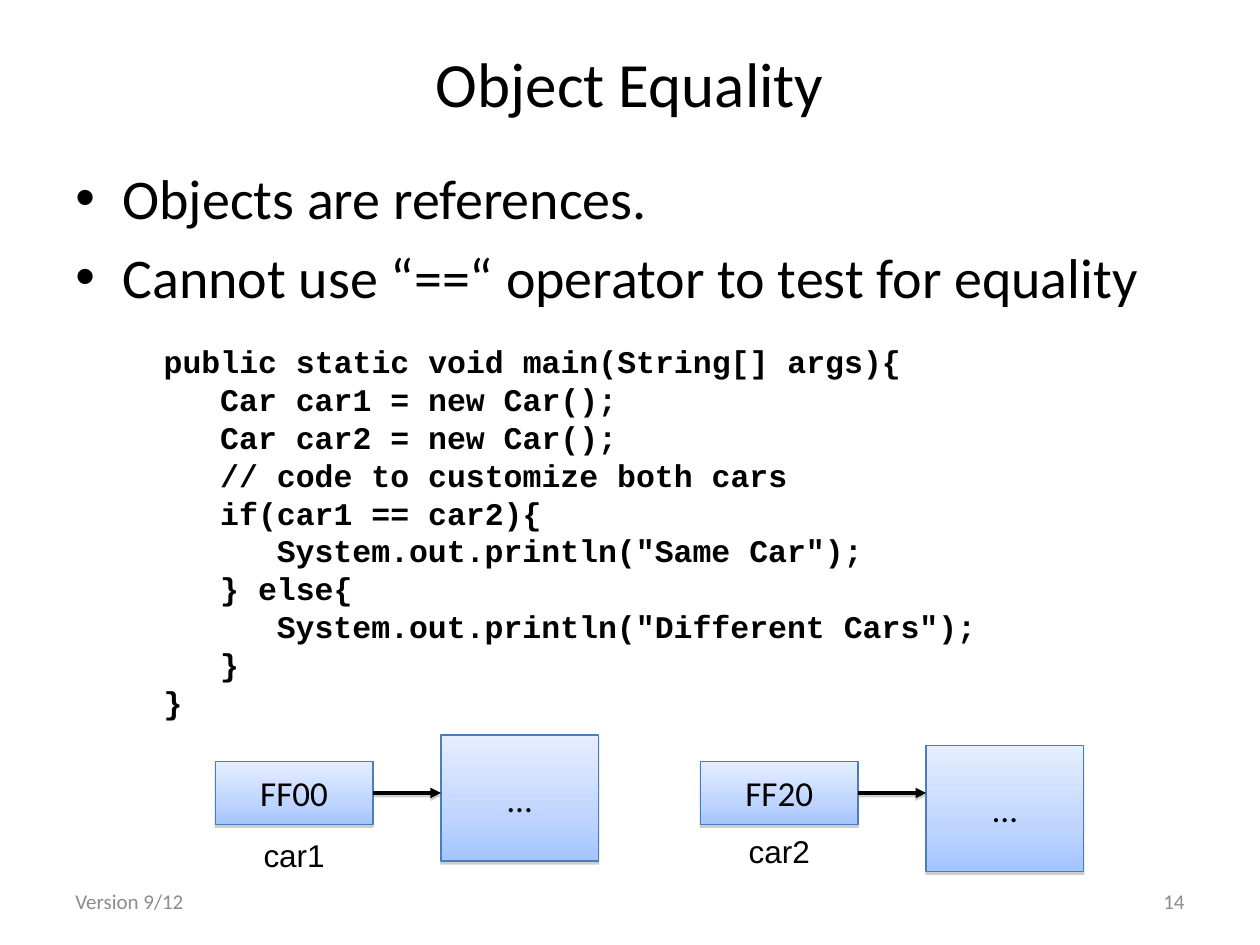
from dataclasses import dataclass

from lxml import etree
from pptx import Presentation
from pptx.dml.color import RGBColor
from pptx.enum.shapes import MSO_CONNECTOR, MSO_SHAPE
from pptx.enum.text import MSO_ANCHOR, PP_ALIGN
from pptx.oxml.ns import qn
from pptx.util import Cm, Pt

LEFT, CENTER, RIGHT = PP_ALIGN.LEFT, PP_ALIGN.CENTER, PP_ALIGN.RIGHT
TOP, MIDDLE = MSO_ANCHOR.TOP, MSO_ANCHOR.MIDDLE
ROUNDED, STRAIGHT = MSO_SHAPE.ROUNDED_RECTANGLE, MSO_CONNECTOR.STRAIGHT
RIGHT_SIDE = 3


@dataclass(frozen=True)
class Theme:
    text: str = "000000"
    muted: str = "8C8C8C"
    border: str = "4A7EBB"
    shadow: str = "808080"
    gradient: tuple = ((0, "E5EEFF"), (65, "BFD5FF"), (100, "A3C4FF"))
    font: str = "Calibri"
    code_font: str = "Courier New"
    label_font: str = "Arial"
    title_size: float = 36
    body_size: float = 32
    box_size: float = 20
    code_size: float = 18
    footer_size: float = 12


@dataclass(frozen=True)
class Box:
    """A rectangle in centimetres."""
    left: float
    top: float
    width: float
    height: float

    def lengths(self):
        return Cm(self.left), Cm(self.top), Cm(self.width), Cm(self.height)


THEME = Theme()
BULLETS = ("Objects are references.",
           "Cannot use “==“ operator to test for equality")
CODE = (
    (0, "public static void main(String[] args){"),
    (1, "Car car1 = new Car();"),
    (1, "Car car2 = new Car();"),
    (1, "// code to customize both cars"),
    (1, "if(car1 == car2){"),
    (2, 'System.out.println("Same Car");'),
    (1, "} else{"),
    (2, 'System.out.println("Different Cars");'),
    (1, "}"),
    (0, "}"),
)
CODE_INDENT = 1.14


def add_child(parent, tag, **attributes):
    child = etree.SubElement(parent, qn(tag))
    for name, value in attributes.items():
        child.set(name, str(value))
    return child


def write(frame, lines, *, size, font=THEME.font, color=THEME.text, bold=False,
          align=LEFT, anchor=TOP, wrap=True, space_before=0):
    """Fill a text frame with one paragraph per line and return them."""
    frame.word_wrap = wrap
    frame.vertical_anchor = anchor
    for index, line in enumerate(lines):
        para = frame.paragraphs[0] if index == 0 else frame.add_paragraph()
        para.alignment = align
        para.space_before = Pt(space_before)
        span = para.add_run()
        span.text = line
        span.font.name = font
        span.font.size = Pt(size)
        span.font.bold = bold
        span.font.color.rgb = RGBColor.from_string(color)
    return frame.paragraphs


def add_text(page, box, *lines, **style):
    frame = page.shapes.add_textbox(*box.lengths()).text_frame
    return write(frame, lines, **style)


def add_shadow(properties):
    effects = properties.find(qn("a:effectLst"))
    if effects is None:
        effects = add_child(properties, "a:effectLst")
    shadow = add_child(effects, "a:outerShdw", blurRad=0, dist=Pt(1.6),
                       dir=90 * 60000, algn="ctr", rotWithShape=0)
    color = add_child(shadow, "a:srgbClr", val=THEME.shadow)
    add_child(color, "a:alpha", val=38000)


def add_memory_box(page, box, text):
    shape = page.shapes.add_shape(ROUNDED, *box.lengths())
    shape.adjustments[0] = 0
    shape.fill.gradient()
    shape.fill.gradient_angle = 270
    stops = shape._element.spPr.find(qn("a:gradFill")).find(qn("a:gsLst"))
    stops.clear()
    for percent, color in THEME.gradient:
        stop = add_child(stops, "a:gs", pos=percent * 1000)
        add_child(stop, "a:srgbClr", val=color)
    shape.line.color.rgb = RGBColor.from_string(THEME.border)
    shape.line.width = Pt(0.75)
    shape.shadow.inherit = False
    add_shadow(shape._element.spPr)
    write(shape.text_frame, [text], size=THEME.box_size, align=CENTER,
          anchor=MIDDLE, wrap=False)
    return shape


def add_arrow(page, start_shape, end_x, y):
    """Draw an arrow from the right side of a shape to a point."""
    arrow = page.shapes.add_connector(STRAIGHT, 0, 0, Cm(end_x), Cm(y))
    arrow.begin_connect(start_shape, RIGHT_SIDE)
    arrow.line.color.rgb = RGBColor.from_string(THEME.text)
    arrow.line.width = Pt(2)
    add_child(arrow.line._get_or_add_ln(), "a:tailEnd", type="triangle")
    add_shadow(arrow._element.spPr)


def draw_title(page, box):
    add_text(page, box, "Object Equality", size=THEME.title_size,
             align=CENTER, anchor=MIDDLE)


def draw_bullets(page, box):
    for para in add_text(page, box, *BULLETS, size=THEME.body_size,
                         space_before=6.4):
        properties = para._p.get_or_add_pPr()
        properties.set("marL", str(Cm(0.95)))
        properties.set("indent", str(-Cm(0.95)))
        add_child(properties, "a:buFont", typeface=THEME.label_font)
        add_child(properties, "a:buChar", char="•")


def draw_code(page, box):
    paras = add_text(page, box, *(line for _, line in CODE), bold=True,
                     size=THEME.code_size, font=THEME.code_font)
    for para, (level, _) in zip(paras, CODE):
        para._p.get_or_add_pPr().set("marL", str(Cm(level * CODE_INDENT)))


def draw_reference(page, box, name, address, object_rise, label_drop):
    """Draw a named reference in the box and the object it points to."""
    object_left = box.left + box.width + 1.37
    reference = add_memory_box(page, box, address)
    add_memory_box(page, Box(object_left, box.top - object_rise, box.width,
                             box.height * 2), "…")
    add_arrow(page, reference, object_left, box.top + box.height / 2)
    label_box = Box(box.left, box.top + label_drop, box.width, 0.97)
    paras = add_text(page, label_box, name, size=THEME.code_size,
                     font=THEME.label_font, align=CENTER)
    paras[0].space_before = Pt(0)


def draw_footer(page, box):
    part = 5.92
    style = dict(size=THEME.footer_size, color=THEME.muted, anchor=MIDDLE)
    add_text(page, Box(box.left, box.top, part, box.height), "Version 9/12", **style)
    add_text(page, Box(box.left + box.width - part, box.top, part, box.height),
             "14", align=RIGHT, **style)


def main():
    deck = Presentation()
    deck.slide_width, deck.slide_height = Cm(25.4), Cm(19.05)
    page = deck.slides.add_slide(deck.slide_layouts[6])
    draw_title(page, Box(1.27, 0.76, 22.86, 1.78))
    draw_bullets(page, Box(1.27, 3.18, 22.86, 13.84))
    draw_footer(page, Box(1.27, 17.65, 22.86, 1.02))
    draw_code(page, Box(3.05, 6.78, 17.07, 7.95))
    draw_reference(page, Box(4.34, 15.35, 3.18, 1.27), "car1", "FF00", 0.53, 1.38)
    draw_reference(page, Box(14.12, 15.35, 3.18, 1.27), "car2", "FF20", 0.32, 1.3)
    deck.save("out.pptx")


if __name__ == "__main__":
    main()
